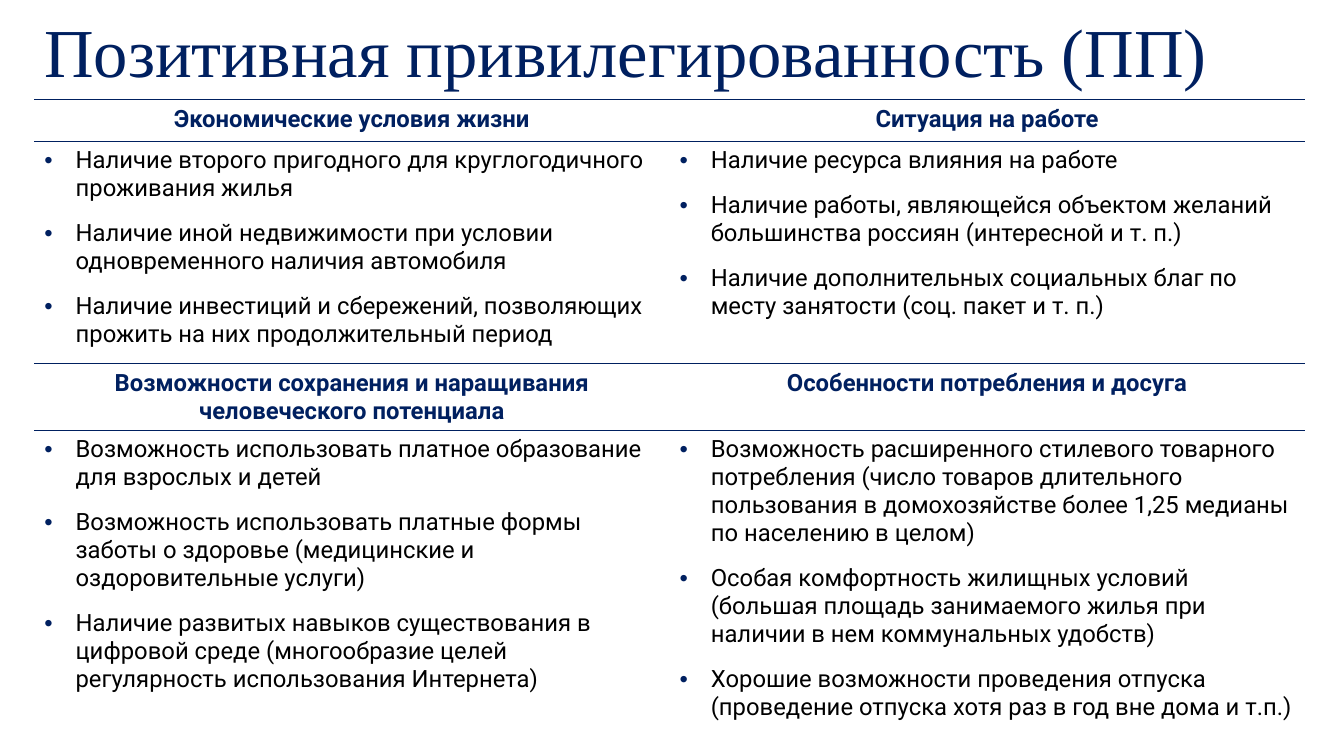
from dataclasses import dataclass

from lxml.etree import SubElement
from pptx import Presentation
from pptx.dml.color import RGBColor as Color
from pptx.enum.text import MSO_ANCHOR as Anchor, MSO_AUTO_SIZE as AutoSize, PP_ALIGN as Align
from pptx.oxml.ns import qn
from pptx.util import Inches, Pt


@dataclass(frozen=True)
class Theme:
    navy: str = "002060"
    black: str = "000000"
    title_font: str = "Times New Roman"
    body_font: str = "Roboto"
    title_size: int = 49
    body_size: int = 17
    rule_width: int = 1
    plain_table: str = "{2D5ABB26-0587-4C30-8999-92F81FD0307C}"


LEFT, WIDTH = 0.34, 12.6

# Each table: top, row heights, and columns of (heading, list items)
TABLES = [
    (0.99, (0.41, 2.13), [
        ("Экономические условия жизни", [
            "Наличие второго пригодного для круглогодичного проживания жилья",
            "Наличие иной недвижимости при условии одновременного наличия автомобиля",
            "Наличие инвестиций и сбережений, позволяющих прожить на них продолжительный период",
        ]),
        ("Ситуация на работе", [
            "Наличие ресурса влияния на работе",
            "Наличие работы, являющейся объектом желаний большинства россиян (интересной и т. п.)",
            "Наличие дополнительных социальных благ по месту занятости (соц. пакет и т. п.)",
        ]),
    ]),
    (3.61, (0.65, 3.0), [
        ("Возможности сохранения и наращивания человеческого потенциала", [
            "Возможность использовать платное образование для взрослых и детей",
            "Возможность использовать платные формы заботы о здоровье "
            "(медицинские и оздоровительные услуги)",
            "Наличие развитых навыков существования в цифровой среде "
            "(многообразие целей регулярность использования Интернета)",
        ]),
        ("Особенности потребления и досуга", [
            "Возможность расширенного стилевого товарного потребления (число товаров "
            "длительного пользования в домохозяйстве более 1,25 медианы по населению в целом)",
            "Особая комфортность жилищных условий (большая площадь занимаемого жилья "
            "при наличии в нем коммунальных удобств)",
            "Хорошие возможности проведения отпуска "
            "(проведение отпуска хотя раз в год вне дома и т.п.)",
        ]),
    ]),
]


def write(para, text, *, font, size, color, bold=False, align=Align.LEFT,
          line_spacing=None, space_after=None):
    """Put formatted text into a paragraph."""
    para.alignment = align
    para.line_spacing = line_spacing
    if space_after is not None:
        para.space_after = Pt(space_after)
    span = para.add_run()
    span.text = text
    span.font.name = font
    span.font.size = Pt(size)
    span.font.bold = bold
    span.font.color.rgb = Color.from_string(color)


class PageBuilder:
    def __init__(self, page, theme):
        self.page = page
        self.theme = theme

    def title(self, text, left, top, width, height):
        box = self.page.shapes.title
        box.left, box.top = Inches(left), Inches(top)
        box.width, box.height = Inches(width), Inches(height)
        frame = box.text_frame
        frame.word_wrap = True
        frame.auto_size = AutoSize.NONE
        frame.vertical_anchor = Anchor.TOP
        write(frame.paragraphs[0], text, font=self.theme.title_font,
              size=self.theme.title_size, color=self.theme.navy, line_spacing=0.9)

    def table(self, columns, left, top, width, heights):
        frame = self.page.shapes.add_table(
            len(heights), len(columns), Inches(left), Inches(top),
            Inches(width), Inches(sum(heights)))
        table = frame.table
        table.first_row = table.horz_banding = False
        frame._element.find(".//" + qn("a:tableStyleId")).text = self.theme.plain_table
        for row, height in zip(table.rows, heights):
            row.height = Inches(height)
        for index, (heading, items) in enumerate(columns):
            table.columns[index].width = Inches(width / len(columns))
            self.heading(table.cell(0, index), heading)
            self.bullets(table.cell(1, index), items)
        for cell in table.iter_cells():
            self.top_rule(cell)
            cell.fill.background()

    def heading(self, cell, text):
        write(cell.text_frame.paragraphs[0], text, font=self.theme.body_font,
              size=self.theme.body_size, color=self.theme.navy, bold=True,
              align=Align.CENTER)

    def bullets(self, cell, items):
        frame = cell.text_frame
        for index, item in enumerate(items):
            para = frame.add_paragraph() if index else frame.paragraphs[0]
            write(para, item, font=self.theme.body_font, size=self.theme.body_size,
                  color=self.theme.black, space_after=12)
            # Hanging indent and coloured bullet
            props = para._p.get_or_add_pPr()
            props.set("marL", str(Inches(0.31)))
            props.set("indent", str(-Inches(0.31)))
            tint = SubElement(props, qn("a:buClr"))
            SubElement(tint, qn("a:srgbClr"), val=self.theme.navy)
            SubElement(props, qn("a:buFont"), typeface="Arial")
            SubElement(props, qn("a:buChar"), char="•")

    def top_rule(self, cell):
        props = cell._tc.get_or_add_tcPr()
        rule = SubElement(props, qn("a:lnT"), w=str(Pt(self.theme.rule_width)))
        fill = SubElement(rule, qn("a:solidFill"))
        SubElement(fill, qn("a:srgbClr"), val=self.theme.navy)


def main():
    deck = Presentation()
    deck.slide_width, deck.slide_height = Inches(13.33), Inches(7.5)
    page = deck.slides.add_slide(deck.slide_layouts.get_by_name("Title Only"))
    builder = PageBuilder(page, Theme())

    # Title
    builder.title("Позитивная привилегированность (ПП)", LEFT, 0.13, WIDTH, 1.5)

    # Two tables of criteria
    for top, heights, columns in TABLES:
        builder.table(columns, LEFT, top, WIDTH, heights)

    deck.save("out.pptx")


if __name__ == "__main__":
    main()
